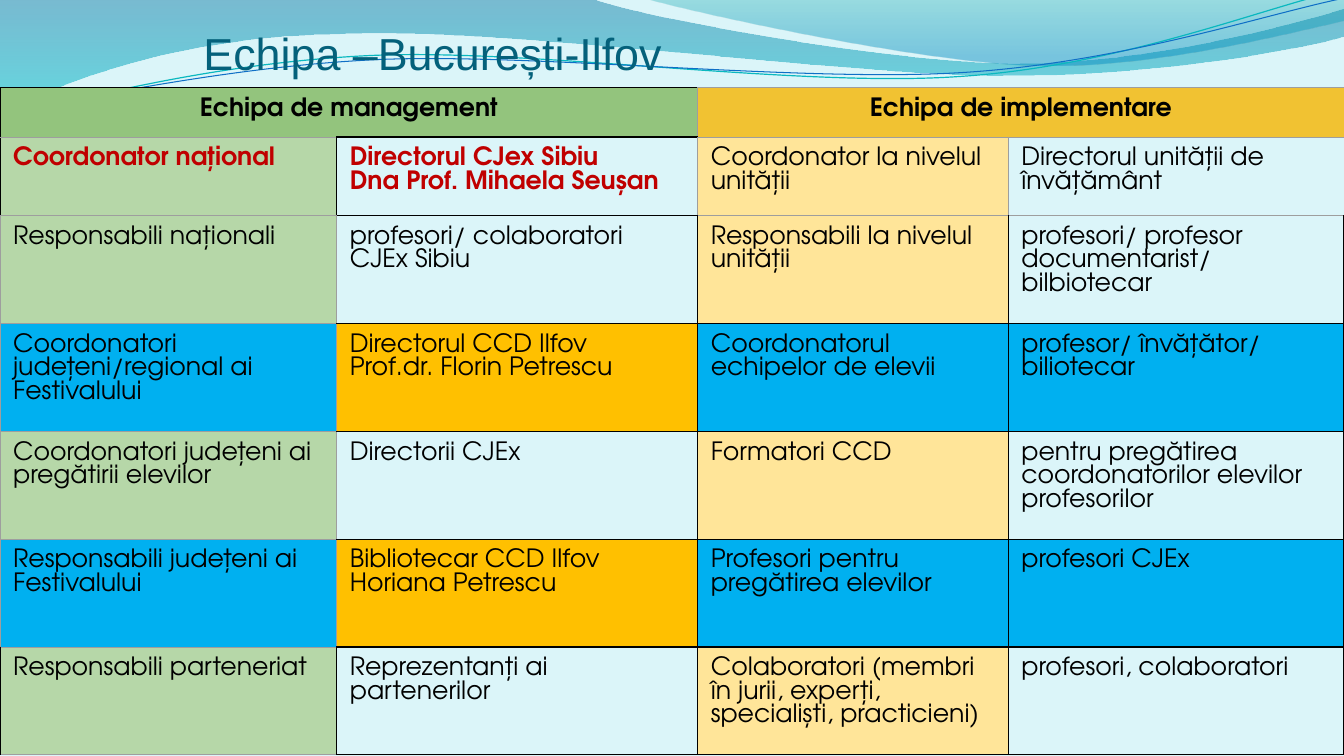
from lxml.etree import SubElement
from pptx import Presentation
from pptx.dml.color import RGBColor
from pptx.enum.text import PP_ALIGN
from pptx.oxml.ns import qn
from pptx.util import Inches, Pt

COLS, ROWS = 1333, 750  # grid of the slide
GREEN, SAND, BLUE, AMBER = "B6D7A8", "FFE599", "00B0F0", "FFC000"
PLAIN = (GREEN, None, SAND, None)
REGIONAL = (BLUE, AMBER, BLUE, BLUE)
SIDES = {"l": "a:lnL", "r": "a:lnR", "t": "a:lnT", "b": "a:lnB"}

# Waves: a start point, then points to draw to (2 numbers) or curves (6 numbers)
WAVE_LEFT = [(0, 0), (587, -1), (634, 17, 885, 63, 1011, 63),
             (1138, 63, 1278, 26, 1333, 9), (1335, 36),
             (1311, 44, 1160, 76, 994, 75), (829, 75, 509, 28, 343, 34),
             (172, 36, 61, 83, -1, 113)]
WAVE_RIGHT = [(639, -1), (679, 11, 909, 62, 1025, 65),
              (1141, 69, 1282, 32, 1333, 21), (1333, 0)]
LINE_TEAL = [(-1, 119), (64, 101, 211, 62, 369, 55),
             (527, 48, 790, 87, 950, 76), (1110, 66, 1252, 8, 1331, -10)]
LINE_BLUE = [(0, 112), (63, 103, 218, 66, 378, 59),
             (537, 53, 796, 82, 955, 72), (1115, 62, 1255, 14, 1334, -2)]

HEADERS = [("Echipa de management", "93C47D", "rb"),
           ("Echipa de implementare", "F1C232", "lrtb")]
# Each row: fills, then (text, sides with a grey border) for each cell
TEAM = [
    (PLAIN, ("Coordonator național", "tb"),
     ("Directorul CJex Sibiu\nDna Prof. Mihaela Seușan", "r"),
     ("Coordonator la nivelul unității", "lrtb"),
     ("Directorul unității de învățământ", "lrtb")),
    (PLAIN, ("Responsabili naționali", "lrtb"),
     ("profesori/ colaboratori CJEx Sibiu", "l"),
     ("Responsabili la nivelul unității", "t"),
     ("profesori/ profesor documentarist/ bilbiotecar", "t")),
    (REGIONAL, ("Coordonatori județeni/regional ai Festivalului", "lrtb"),
     ("Directorul CCD Ilfov\nProf.dr. Florin Petrescu", "l"),
     ("Coordonatorul echipelor de elevii", ""),
     ("profesor/ învățător/ biliotecar", "")),
    (PLAIN, ("Coordonatori județeni ai pregătirii elevilor", "lrtb"),
     ("Directorii CJEx", "l"), ("Formatori CCD", ""),
     ("pentru pregătirea coordonatorilor elevilor\nprofesorilor", "")),
    (REGIONAL, ("Responsabili județeni ai Festivalului", "lrtb"),
     ("Bibliotecar CCD Ilfov\nHoriana Petrescu", "l"),
     ("Profesori pentru pregătirea elevilor", ""), ("profesori CJEx", "")),
    (PLAIN, ("Responsabili parteneriat", "tb"),
     ("Reprezentanți ai partenerilor", ""),
     ("Colaboratori (membri în jurii, experți, specialiști, practicieni)", ""),
     ("profesori, colaboratori", "")),
]


def rgb(color):
    return RGBColor.from_string(color)


class Deck:
    title_font, table_font = "Arial", "TeX Gyre Adventor"

    def __init__(self, background):
        self.prs = Presentation()
        self.prs.slide_width, self.prs.slide_height = Inches(13.33), Inches(7.5)
        self.s = self.prs.slides.add_slide(self.prs.slide_layouts[6])
        self.s.background.fill.solid()
        self.s.background.fill.fore_color.rgb = rgb(background)

    def x(self, cols):
        return round(self.prs.slide_width * cols / COLS)

    def y(self, rows):
        return round(self.prs.slide_height * rows / ROWS)

    def outline(self, outline, closed):
        """Draw through all points, then join each curve's three into a Bezier."""
        points = [(self.x(part[i]), self.y(part[i + 1]))
                  for part in outline for i in range(0, len(part), 2)]
        builder = self.s.shapes.build_freeform(*points[0])
        builder.add_line_segments(points[1:], close=closed)
        sp = builder.convert_to_shape()
        sp.shadow.inherit = False
        segments = iter(list(sp._element.iter(qn("a:lnTo"))))
        for part in outline[1:]:
            first = next(segments)
            if len(part) == 6:
                first.tag = qn("a:cubicBezTo")
                for _ in range(2):
                    other = next(segments)
                    first.append(other[0])
                    other.getparent().remove(other)
        return sp

    def wave(self, outline, *stops):
        """Fill an outline from top to bottom; a stop is (place, colour, opacity)."""
        sp = self.outline(outline, True)
        sp.line.fill.background()
        sp.fill.gradient()
        sp.fill.gradient_angle = 270
        for stop, (place, color, _) in zip(sp.fill.gradient_stops, stops):
            stop.position = place
            stop.color.rgb = rgb(color)
        for node, (_, _, opacity) in zip(sp._element.iter(qn("a:srgbClr")), stops):
            SubElement(node, qn("a:alpha"), val=str(opacity * 1000))

    def curve(self, outline, color, width):
        sp = self.outline(outline, False)
        sp.fill.background()
        sp.line.color.rgb = rgb(color)
        sp.line.width = Pt(width)

    def style(self, p, font, size, color, bold=False):
        for r in p.runs:
            r.font.name, r.font.size, r.font.bold = font, Pt(size), bold
            r.font.color.rgb = rgb(color)

    def title(self, text, left, top, width, height):
        tf = self.s.shapes.add_textbox(
            self.x(left), self.y(top), self.x(width), self.y(height)).text_frame
        tf.word_wrap = True
        tf.text = text
        self.style(tf.paragraphs[0], self.title_font, 32, "04617B")

    def table(self, top, widths, heights):
        table = self.s.shapes.add_table(
            len(heights), len(widths), 0, self.y(top),
            self.x(sum(widths)), self.y(sum(heights))).table
        table.first_row = table.horz_banding = False
        for column, width in zip(table.columns, widths):
            column.width = self.x(width)
        for row, height in zip(table.rows, heights):
            row.height = self.y(height)
        return table

    def borders(self, cell, grey):
        tcPr = cell._tc.get_or_add_tcPr()
        for side, tag in SIDES.items():
            width, color = (0.75, "9E9E9E") if side in grey else (1, "000000")
            ln = SubElement(tcPr, qn(tag), w=str(Pt(width)))
            SubElement(SubElement(ln, qn("a:solidFill")), qn("a:srgbClr"), val=color)

    def cell(self, cell, text, fill, grey, color="000000", bold=False, align=PP_ALIGN.LEFT):
        self.borders(cell, grey)
        if fill:
            cell.fill.solid()
            cell.fill.fore_color.rgb = rgb(fill)
        else:
            cell.fill.background()
        cell.margin_left = cell.margin_right = self.x(13)
        cell.margin_top, cell.margin_bottom = self.y(10), self.y(5)
        cell.text_frame.text = text
        for p in cell.text_frame.paragraphs:
            p.alignment = align
            self.style(p, self.table_font, 18, color, bold)


def main():
    deck = Deck("DBF5F9")
    deck.wave(WAVE_LEFT, (0, "0074A1", 45), (1, "00C6CF", 55))
    deck.wave(WAVE_RIGHT, (0, "00A1A9", 30), (0.8, "008BBF", 45))
    deck.curve(LINE_TEAL, "0AB8BF", 0.85)
    deck.curve(LINE_BLUE, "0F6FC6", 0.75)
    deck.title("Echipa –București-Ilfov", 192, 21, 1100, 87)

    table = deck.table(87, (334, 358, 308, 333), (49, 78) + (107,) * 5)
    for i, (text, fill, grey) in enumerate(HEADERS):
        first, second = table.cell(0, 2 * i), table.cell(0, 2 * i + 1)
        first.merge(second)
        deck.cell(first, text, fill, grey, bold=True, align=PP_ALIGN.CENTER)
        deck.borders(second, grey)
    for row, (fills, *cells) in enumerate(TEAM, 1):
        for col, (fill, (text, grey)) in enumerate(zip(fills, cells)):
            national = row == 1 and col < 2
            deck.cell(table.cell(row, col), text, fill, grey,
                      "C00000" if national else "000000", national)
    deck.prs.save("out.pptx")


if __name__ == "__main__":
    main()
